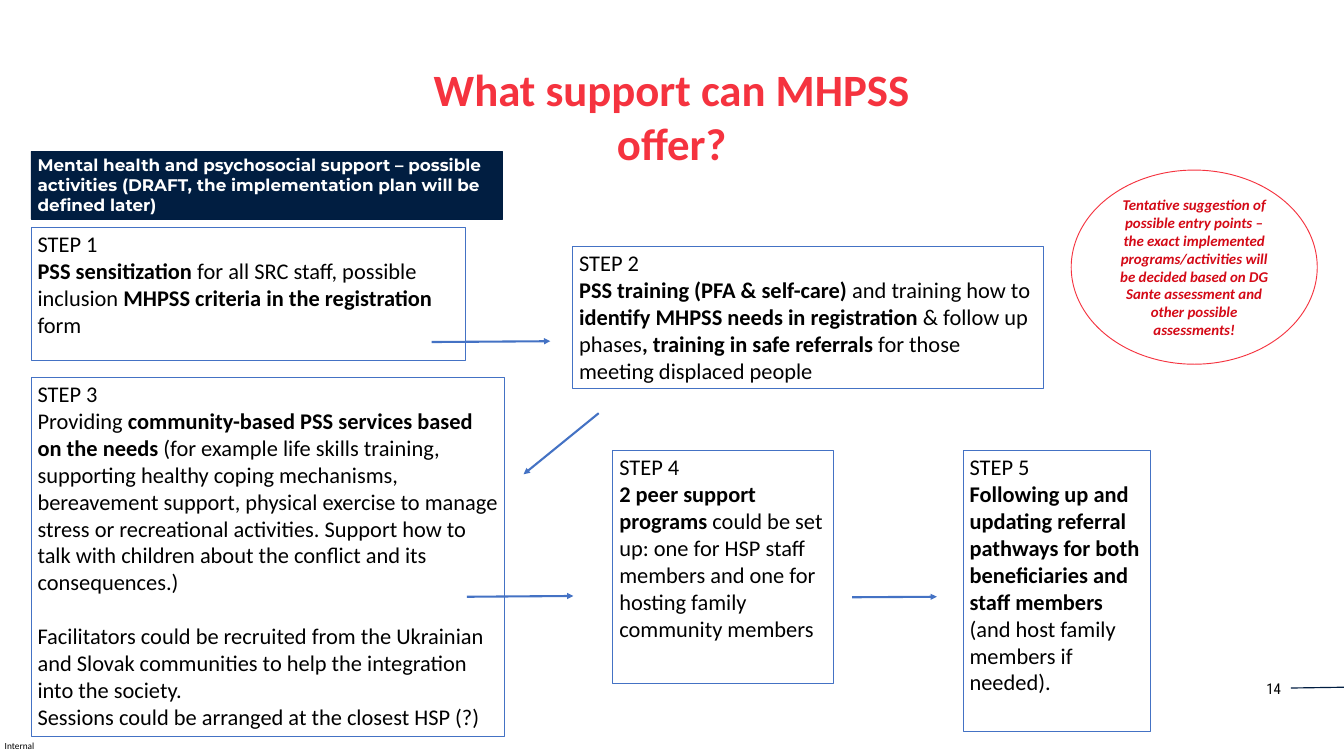
import lxml.etree
import pptx
import pptx.dml.color
import pptx.enum.shapes
import pptx.enum.text
import pptx.oxml.ns
import pptx.util

Cm, Pt = pptx.util.Cm, pptx.util.Pt
SHAPE = pptx.enum.shapes.MSO_SHAPE
ANCHOR = pptx.enum.text.MSO_ANCHOR
ALIGN = pptx.enum.text.PP_ALIGN
NAVY, RED, BLUE, BLACK = "001D41", "F5333F", "4472C4", "000000"
BODY = {"name": "Calibri", "size": Pt(24)}

STEPS = [
    ((0, 0, 16.43, 5.05), [
        "STEP 1",
        "**PSS sensitization** for all SRC staff, possible inclusion "
        "**MHPSS criteria in the registration** form"]),
    ((20.47, 0.71, 17.81, 5.38), [
        "STEP 2",
        "**PSS training (PFA & self-care) **and training how to **identify MHPSS needs "
        "in registration** & follow up phases**, training in safe referrals** for those "
        "meeting displaced people"]),
    ((0, 5.66, 17.91, 13.59), [
        "STEP 3",
        "Providing **community-based PSS services based on the needs **(for example life "
        "skills training, supporting healthy coping mechanisms, bereavement support, "
        "physical exercise to manage stress or recreational activities. Support how to "
        "talk with children about the conflict and its consequences.)",
        "Facilitators could be recruited from the Ukrainian and Slovak communities to "
        "help the integration into the society.",
        "Sessions could be arranged at the closest HSP (?)"]),
    ((21.99, 8.43, 8.33, 8.81), [
        "STEP 4",
        "**2 peer support programs **could be set up: one for HSP staff members and one "
        "for hosting family community members"]),
    ((35.23, 8.43, 7.09, 10.64), [
        "STEP 5",
        "**Following up and updating referral pathways for both beneficiaries and staff "
        "members **(and host family members if needed)."]),
]
ARROWS = [
    (15.14, 4.34, 19.63, 4.31),
    (21.46, 7.03, 18.62, 9.34),
    (16.48, 13.97, 20.5, 13.94),
    (31.04, 13.99, 34.24, 13.97),
]


def rgb(color):
    """Turn a hex string into a colour."""
    return pptx.dml.color.RGBColor.from_string(color)


def apply(obj, values):
    """Set attributes of an object from a dict."""
    for key, value in values.items():
        setattr(obj, key, value)


def write(sp, lines, font, color, align=ALIGN.LEFT, anchor=ANCHOR.TOP):
    """Fill a shape with paragraphs; ** switches bold."""
    tf = sp.text_frame
    apply(tf, {"word_wrap": True, "vertical_anchor": anchor,
               "auto_size": pptx.enum.text.MSO_AUTO_SIZE.NONE})
    for i, line in enumerate(lines):
        p = tf.paragraphs[0] if i == 0 else tf.add_paragraph()
        apply(p, {"alignment": align, "space_before": Pt(0), "line_spacing": 1.0})
        for j, part in enumerate(line.split("**")):
            if part:
                r = p.add_run()
                r.text = part
                apply(r.font, {"bold": j % 2 == 1, **font})
                r.font.color.rgb = rgb(color)
    return tf


def add_box(s, kind, box, line, width=0.75, fill=None):
    """Add an outlined preset shape."""
    sp = s.shapes.add_shape(kind, *map(Cm, box))
    sp.shadow.inherit = False
    if fill:
        sp.fill.solid()
        sp.fill.fore_color.rgb = rgb(fill)
    else:
        sp.fill.background()
    sp.line.color.rgb = rgb(line)
    sp.line.width = Pt(width)
    return sp


def add_line(s, ends, color, width, arrow=False):
    """Add a straight line, with an arrowhead at its end if asked."""
    sp = s.shapes.add_connector(pptx.enum.shapes.MSO_CONNECTOR.STRAIGHT, *map(Cm, ends))
    sp.line.color.rgb = rgb(color)
    sp.line.width = Pt(width)
    qn = pptx.oxml.ns.qn
    if arrow:
        ln = sp.line._get_or_add_ln()
        lxml.etree.SubElement(ln, qn("a:tailEnd"), type="triangle")
    lxml.etree.SubElement(sp._element.spPr, qn("a:effectLst"))


def add_title(s, box):
    """Place the title."""
    sp = s.shapes.title
    apply(sp, dict(zip(("left", "top", "width", "height"), map(Cm, box))))
    write(sp, ["What support can MHPSS", "offer?"],
          {"name": "Calibri", "size": Pt(48), "bold": True}, RED, ALIGN.CENTER)


def add_heading(s, box):
    """Place the dark heading band."""
    sp = add_box(s, SHAPE.RECTANGLE, box, NAVY, fill="011E41")
    write(sp, ["Mental health and psychosocial support – possible activities "
               "(DRAFT, the implementation plan will be defined later)"],
          {"name": "Montserrat", "size": Pt(18), "bold": True}, "FFFFFF")


def add_flow(s, x, y):
    """Place the steps and the arrows between them."""
    for (dx, dy, w, h), lines in STEPS:
        sp = add_box(s, SHAPE.RECTANGLE, (x + dx, y + dy, w, h), BLUE)
        tf = write(sp, lines, BODY, BLACK)
        if len(lines) > 2:
            tf.paragraphs[2].space_before = Pt(29.3)
    for x1, y1, x2, y2 in ARROWS:
        add_line(s, (x + x1, y + y1, x + x2, y + y2), BLUE, 2.25, arrow=True)


def add_note(s, box):
    """Place the oval remark."""
    sp = add_box(s, SHAPE.OVAL, box, RED, 1)
    write(sp, ["Tentative suggestion of possible entry points – the exact implemented "
               "programs/activities will be decided based on DG Sante assessment and "
               "other possible assessments!"],
          {"name": "Calibri", "size": Pt(16), "bold": True, "italic": True},
          "D40A17", ALIGN.CENTER, ANCHOR.MIDDLE)


def add_footer(s, x, y, w):
    """Place the label, the page number and its rule."""
    sp = s.shapes.add_textbox(Cm(x + 0.18), Cm(y + 2.44), Cm(1.3), Cm(0.43))
    tf = write(sp, ["Internal"], {"name": "Calibri", "size": Pt(10)}, BLACK)
    apply(tf, dict.fromkeys(
        ("margin_left", "margin_right", "margin_top", "margin_bottom"), 0))
    sp = s.shapes.add_textbox(Cm(x + w - 3.96), Cm(y), Cm(1.83), Cm(0.94))
    write(sp, ["14"], {"name": "Roboto Condensed", "size": Pt(16)}, BLACK, ALIGN.RIGHT)
    add_line(s, (x + w - 2.01, y + 0.46, x + w, y + 0.43), NAVY, 1.25)


def main():
    """Build and save the slide."""
    prs = pptx.Presentation()
    apply(prs, {"slide_width": Cm(50.8), "slide_height": Cm(28.58)})
    s = prs.slides.add_slide(prs.slide_layouts[5])
    add_footer(s, 0, 25.55, 50.8)
    add_title(s, (4.93, 2.21, 40.92, 6.4))
    add_heading(s, (1.17, 5.72, 17.81, 2.57))
    add_flow(s, 1.17, 8.59)
    add_note(s, (40.49, 6.43, 9.3, 7.34))
    prs.save("out.pptx")


if __name__ == "__main__":
    main()
